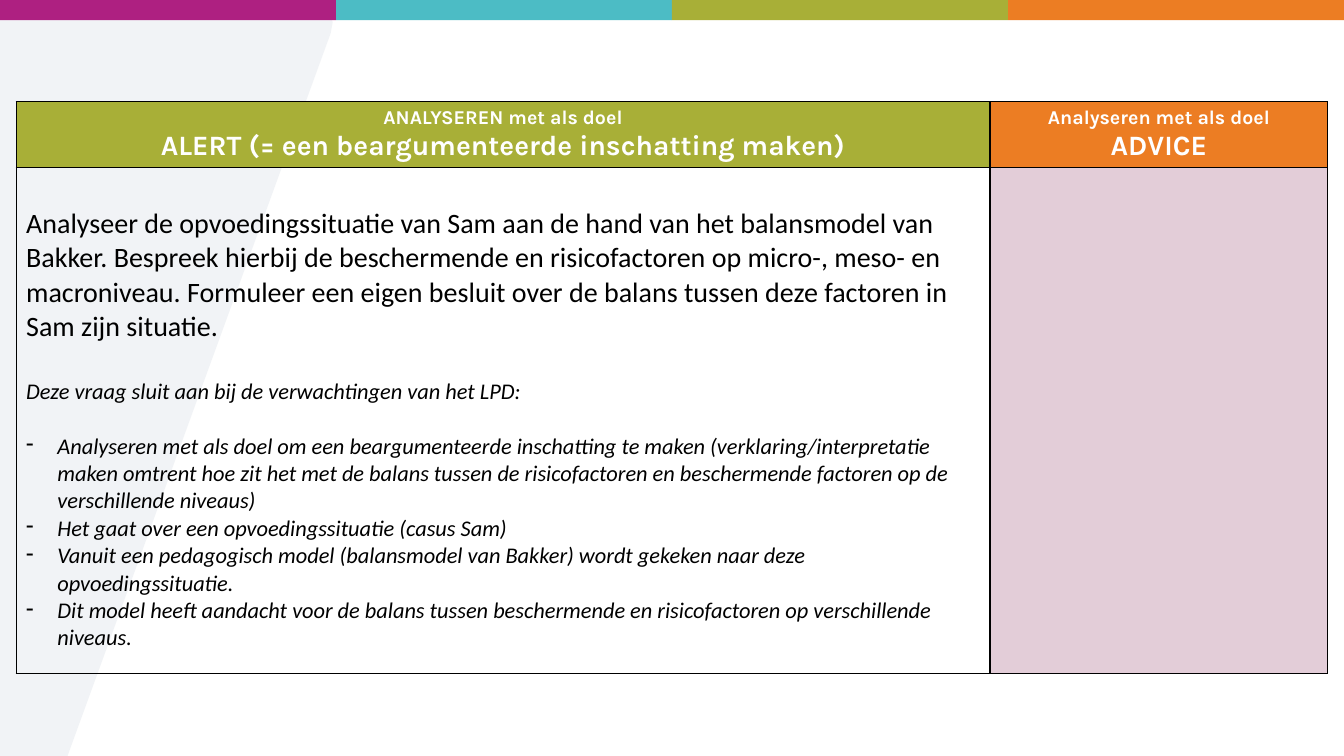
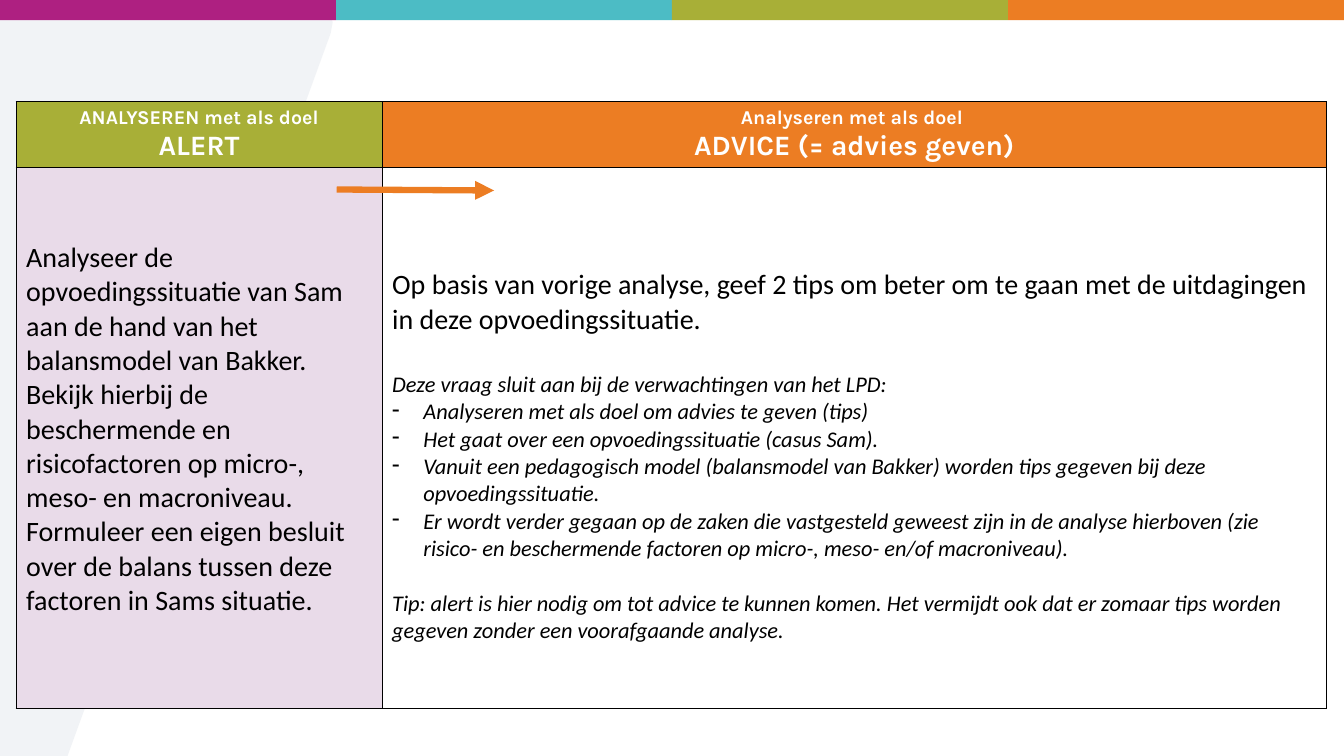
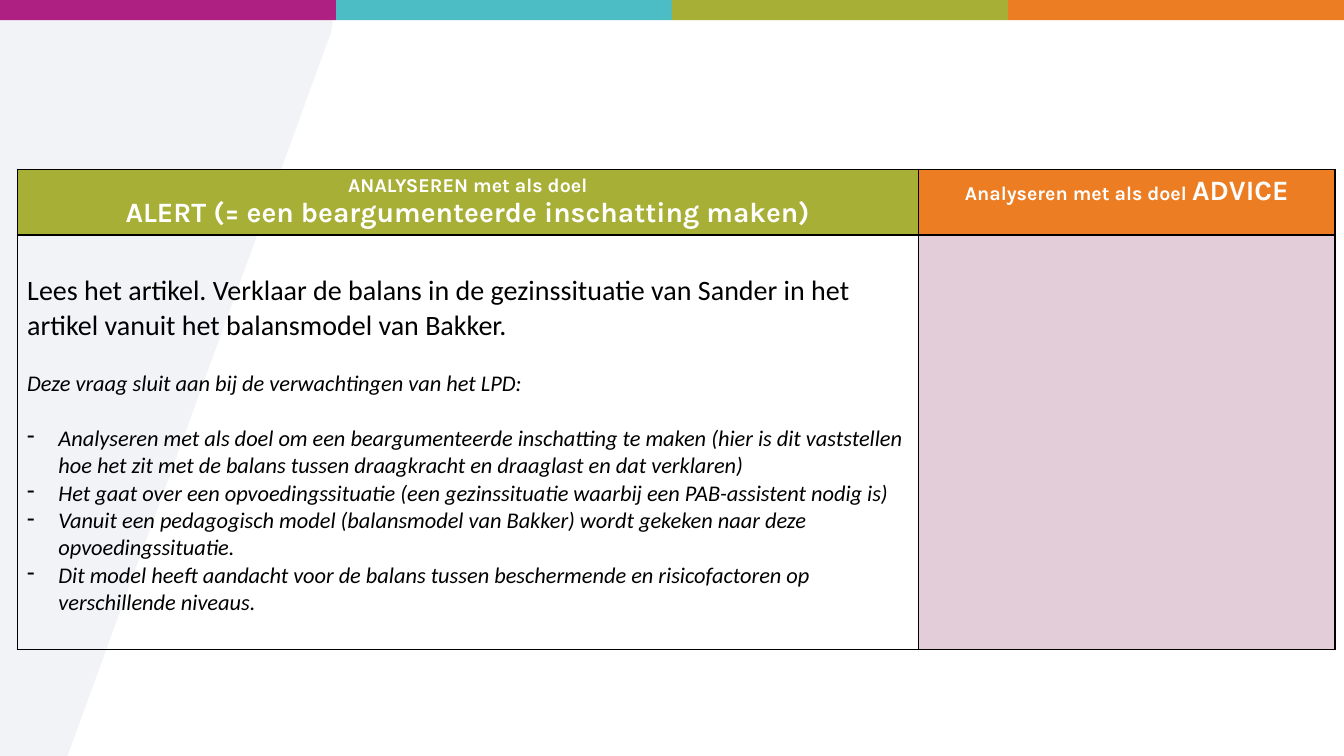
from pptx import Presentation
from pptx.dml.color import RGBColor
from pptx.enum.shapes import MSO_CONNECTOR, MSO_SHAPE
from pptx.enum.text import PP_ALIGN
from pptx.oxml.ns import qn
from pptx.util import Inches, Pt
from lxml.etree import SubElement

COLORS = {
    "magenta": "AE2081", "teal": "4CBCC5", "green": "A8AF37", "orange": "EC7D23",
    "wedge": "E8ECF0", "rose": "E3CDD8", "lilac": "E9DBE9",
    "black": "000000", "white": "FFFFFF",
}
WIDTH, HEIGHT = 13.33, 7.5
BAND_COLORS = ["magenta", "teal", "green", "orange"]
BAND_HEIGHT = 0.2
WEDGE = [(0, 0.05), (3.09, 0.05), (3.2, 0.08), (3.27, 0.13), (3.3, 0.22),
         (3.28, 0.33), (0.67, HEIGHT), (0, HEIGHT)]
HEADER_ROW = 0.65
HEADER_COLORS = ["green", "orange"]
LINE_SPACING = 1.22
INDENT = 0.31

STYLES = {
    "question": {"size": 20, "italic": False, "bullet": False},
    "note": {"size": 16, "italic": True, "bullet": False},
    "point": {"size": 16, "italic": True, "bullet": True},
}

ALERT_INTRO = ("ANALYSEREN met als doel", 14)
ADVICE_INTRO = ("Analyseren met als doel ", 14)
ALERT_LONG = [[ALERT_INTRO], [("ALERT (= een beargumenteerde inschatting maken)", 20)]]
ADVICE_SHORT = [[ADVICE_INTRO, ("ADVICE", 20)]]
LPD = "Deze vraag sluit aan bij de verwachtingen van het LPD:"
MODEL = ("point", "Vanuit een pedagogisch model (balansmodel van Bakker) wordt gekeken naar deze opvoedingssituatie.", 0)
LEVELS = ("point", "Dit model heeft aandacht voor de balans tussen beschermende en risicofactoren op verschillende niveaus.", 0)
NO_TEXT = {"fill": "rose", "top_gap": 0, "text": []}

SLIDES = [
    {
        "at": (0.16, 1.01), "columns": [9.66, 3.35], "body_row": 5.02,
        "headers": [ALERT_LONG, ADVICE_SHORT],
        "bodies": [
            {"fill": None, "top_gap": 20, "text": [
                ("question", "Analyseer de opvoedingssituatie van Sam aan de hand van het balansmodel van Bakker. Bespreek hierbij de beschermende en risicofactoren op micro-, meso- en macroniveau. Formuleer een eigen besluit over de balans tussen deze factoren in Sam zijn situatie.", 0),
                ("note", LPD, 20),
                ("point", "Analyseren met als doel om een beargumenteerde inschatting te maken (verklaring/interpretatie maken omtrent hoe zit het met de balans tussen de risicofactoren en beschermende factoren op de verschillende niveaus)", 16),
                ("point", "Het gaat over een opvoedingssituatie (casus Sam)", 0),
                MODEL, LEVELS]},
            NO_TEXT],
    },
    {
        "at": (0.16, 1.01), "columns": [3.63, 9.37], "body_row": 5.37,
        "headers": [[[ALERT_INTRO], [("ALERT", 20)]],
                    [[ADVICE_INTRO], [("ADVICE (= advies geven)", 20)]]],
        "bodies": [
            {"fill": "lilac", "top_gap": 40, "text": [
                ("question", "Analyseer de opvoedingssituatie van Sam aan de hand van het balansmodel van Bakker. Bekijk hierbij de beschermende en risicofactoren op micro-, meso- en macroniveau. Formuleer een eigen besluit over de balans tussen deze factoren in Sams situatie.", 0)]},
            {"fill": None, "top_gap": 56, "text": [
                ("question", "Op basis van vorige analyse, geef 2 tips om beter om te gaan met de uitdagingen in deze opvoedingssituatie.", 0),
                ("note", LPD, 20),
                ("point", "Analyseren met als doel om advies te geven (tips)", 0),
                ("point", "Het gaat over een opvoedingssituatie (casus Sam).", 0),
                ("point", "Vanuit een pedagogisch model (balansmodel van Bakker) worden tips gegeven bij deze opvoedingssituatie.", 0),
                ("point", "Er wordt verder gegaan op de zaken die vastgesteld geweest zijn in de analyse hierboven (zie risico- en beschermende factoren op micro-, meso- en/of macroniveau).", 0),
                ("note", "Tip: alert is hier nodig om tot advice te kunnen komen. Het vermijdt ook dat er zomaar tips worden gegeven zonder een voorafgaande analyse.", 16)]}],
        "arrow": (3.34, 1.88, 4.9, 1.89),
    },
    {
        "at": (0.17, 1.68), "columns": [8.94, 4.13], "body_row": 4.11,
        "headers": [ALERT_LONG, ADVICE_SHORT],
        "bodies": [
            {"fill": None, "top_gap": 20, "text": [
                ("question", "Lees het artikel. Verklaar de balans in de gezinssituatie van Sander in het artikel vanuit het balansmodel van Bakker.", 0),
                ("note", LPD, 16),
                ("point", "Analyseren met als doel om een beargumenteerde inschatting te maken (hier is dit vaststellen hoe het zit met de balans tussen draagkracht en draaglast en dat verklaren)", 16),
                ("point", "Het gaat over een opvoedingssituatie (een gezinssituatie waarbij een PAB-assistent nodig is)", 0),
                MODEL, LEVELS]},
            NO_TEXT],
    },
]


def rgb(name):
    return RGBColor.from_string(COLORS[name])


def paint(shape, color):
    shape.shadow.inherit = False
    shape.fill.solid()
    shape.fill.fore_color.rgb = rgb(color)
    shape.line.fill.background()


def draw_backdrop(slide):
    points = [(Inches(x), Inches(y)) for x, y in WEDGE]
    builder = slide.shapes.build_freeform(*points[0])
    builder.add_line_segments(points[1:], close=True)
    wedge = builder.convert_to_shape()
    paint(wedge, "wedge")
    tint = wedge.fill._xPr.find(qn("a:solidFill"))[0]
    SubElement(tint, qn("a:alpha"), val="59000")

    band_width = WIDTH / len(BAND_COLORS)
    for i, color in enumerate(BAND_COLORS):
        band = slide.shapes.add_shape(
            MSO_SHAPE.RECTANGLE, Inches(i * band_width), 0,
            Inches(band_width), Inches(BAND_HEIGHT))
        paint(band, color)


def style_cell(cell, fill):
    properties = cell._tc.get_or_add_tcPr()
    for side in ("lnL", "lnR", "lnT", "lnB"):
        border = SubElement(properties, qn(f"a:{side}"), w=str(Pt(1)))
        solid = SubElement(border, qn("a:solidFill"))
        SubElement(solid, qn("a:srgbClr"), val=COLORS["black"])
    if fill:
        cell.fill.solid()
        cell.fill.fore_color.rgb = rgb(fill)
    else:
        cell.fill.background()


def style_run(run, font, size, color, bold=False, italic=False):
    run.font.name = font
    run.font.size = Pt(size)
    run.font.bold = bold
    run.font.italic = italic
    run.font.color.rgb = rgb(color)


def paragraphs(frame, count):
    return [frame.paragraphs[0] if i == 0 else frame.add_paragraph() for i in range(count)]


def fill_header(cell, lines, color):
    style_cell(cell, color)
    for paragraph, parts in zip(paragraphs(cell.text_frame, len(lines)), lines):
        paragraph.alignment = PP_ALIGN.CENTER
        for text, size in parts:
            run = paragraph.add_run()
            run.text = text
            style_run(run, "Karla", size, "white", bold=True)


def fill_body(cell, body):
    style_cell(cell, body["fill"])
    cell.margin_top = Inches(0.05) + Pt(body["top_gap"] * LINE_SPACING)
    items = body["text"]
    for paragraph, (kind, text, gap) in zip(paragraphs(cell.text_frame, len(items)), items):
        style = STYLES[kind]
        paragraph.text = text
        if gap:
            paragraph.space_before = Pt(gap * LINE_SPACING)
        if style["bullet"]:
            properties = paragraph._p.get_or_add_pPr()
            properties.set("marL", str(Inches(INDENT)))
            properties.set("indent", str(-Inches(INDENT)))
            SubElement(properties, qn("a:buChar"), char="-")
        for run in paragraph.runs:
            style_run(run, "Calibri", style["size"], "black", italic=style["italic"])


def draw_table(slide, content):
    left, top = content["at"]
    columns, rows = content["columns"], [HEADER_ROW, content["body_row"]]
    table = slide.shapes.add_table(
        len(rows), len(columns), Inches(left), Inches(top),
        Inches(sum(columns)), Inches(sum(rows))).table
    table.first_row = table.horz_banding = False
    for row, height in zip(table.rows, rows):
        row.height = Inches(height)
    for i, width in enumerate(columns):
        table.columns[i].width = Inches(width)
        fill_header(table.cell(0, i), content["headers"][i], HEADER_COLORS[i])
        fill_body(table.cell(1, i), content["bodies"][i])


def draw_arrow(slide, ends):
    arrow = slide.shapes.add_connector(MSO_CONNECTOR.STRAIGHT, *map(Inches, ends))
    arrow.line.color.rgb = rgb("orange")
    arrow.line.width = Pt(4.5)
    SubElement(arrow.line._get_or_add_ln(), qn("a:tailEnd"), type="triangle")
    SubElement(arrow._element.spPr, qn("a:effectLst"))


def main():
    deck = Presentation()
    deck.slide_width, deck.slide_height = Inches(WIDTH), Inches(HEIGHT)
    for content in SLIDES:
        slide = deck.slides.add_slide(deck.slide_layouts[6])
        draw_backdrop(slide)
        draw_table(slide, content)
        if "arrow" in content:
            draw_arrow(slide, content["arrow"])
    deck.save("out.pptx")


if __name__ == "__main__":
    main()
